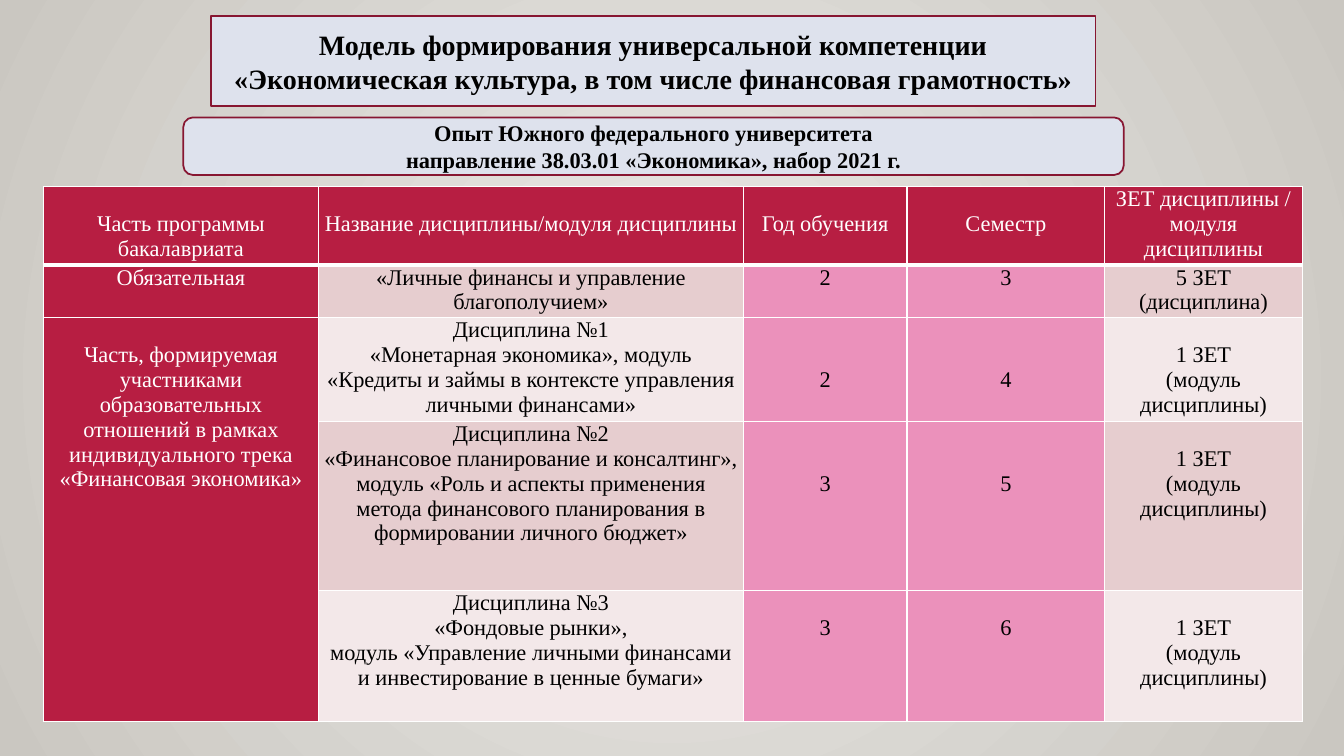
from dataclasses import dataclass
from lxml import etree
from pptx import Presentation
from pptx.dml.color import RGBColor
from pptx.enum.shapes import MSO_SHAPE
from pptx.enum.text import MSO_ANCHOR, MSO_AUTO_SIZE, PP_ALIGN
from pptx.oxml.ns import qn
from pptx.util import Cm, Pt

ROUND = MSO_SHAPE.ROUNDED_RECTANGLE
MIDDLE, TOP = MSO_ANCHOR.MIDDLE, MSO_ANCHOR.TOP
FIXED = MSO_AUTO_SIZE.NONE
CENTER = PP_ALIGN.CENTER

TITLE = ["Модель формирования универсальной компетенции",
         "«Экономическая культура, в том числе финансовая грамотность»"]
SUBTITLE = ["Опыт Южного федерального университета",
            "направление 38.03.01 «Экономика», набор 2021 г."]
UNIT = ["1 ЗЕТ", "(модуль дисциплины)"]

ROWS = [
    [(1, ["Часть программы бакалавриата"]),
     (1, ["Название дисциплины/модуля дисциплины"]),
     (1, ["Год обучения"]),
     (1, ["Семестр"]),
     (0, ["ЗЕТ дисциплины / модуля дисциплины"])],
    [(0, ["Обязательная"]),
     (0, ["«Личные финансы и управление благополучием»"]),
     (0, ["2"]),
     (0, ["3"]),
     (0, ["5 ЗЕТ", "(дисциплина)"])],
    [(1, ["Часть, формируемая участниками образовательных отношений "
          "в рамках индивидуального трека «Финансовая экономика»"]),
     (0, ["Дисциплина №1",
          "«Монетарная экономика», модуль «Кредиты и займы в контексте "
          "управления личными финансами»"]),
     (2, ["2"]),
     (2, ["4"]),
     (1, UNIT)],
    [None,
     (0, ["Дисциплина №2",
          "«Финансовое планирование и консалтинг»,",
          "модуль «Роль и аспекты применения метода финансового "
          "планирования в формировании личного бюджет»"]),
     (2, ["3"]),
     (2, ["5"]),
     (1, UNIT)],
    [None,
     (0, ["Дисциплина №3",
          "«Фондовые рынки»,",
          "модуль «Управление личными финансами и инвестирование "
          "в ценные бумаги»"]),
     (1, ["3"]),
     (1, ["6"]),
     (1, UNIT)],
]
WIDTHS = [6.94, 10.7, 4.13, 4.98, 4.98]
HEIGHTS = [1.98, 1.32, 2.62, 4.27, 3.3]
LINE = 0.63


@dataclass(frozen=True)
class Theme:
    font: str = "Times New Roman"
    dark: str = "000000"
    white: str = "FFFFFF"
    panel: str = "DEE2ED"
    edge: str = "871631"
    red: str = "B71E42"
    pink: str = "EB91BB"
    bands: tuple = ("F3E8E9", "E6CDCF")
    back: tuple = ("ECEAE7", "CAC7C1")
    head: int = 20
    body: int = 16


theme = Theme()


def color(code):
    return RGBColor.from_string(code)


def write(frame, lines, size=theme.body, ink=theme.dark, bold=False):
    frame.word_wrap = True
    for i, line in enumerate(lines):
        para = frame.paragraphs[0] if i == 0 else frame.add_paragraph()
        para.alignment = CENTER
        run = para.add_run()
        run.text = line
        run.font.name = theme.font
        run.font.size = Pt(size)
        run.font.bold = bold
        run.font.color.rgb = color(ink)


def panel(shape, lines, size):
    shape.fill.solid()
    shape.fill.fore_color.rgb = color(theme.panel)
    shape.line.color.rgb = color(theme.edge)
    shape.line.width = Pt(1.25)
    frame = shape.text_frame
    frame.auto_size = FIXED
    frame.vertical_anchor = MIDDLE
    write(frame, lines, size=size, bold=True)


def backdrop(slide):
    fill = slide.background.fill
    fill.gradient()
    for i, stop in enumerate(fill.gradient_stops):
        stop.position = i
        stop.color.rgb = color(theme.back[i])
    grad = next(slide.element.iter(qn("a:gradFill")))
    grad.remove(grad.find(qn("a:lin")))
    ring = etree.SubElement(grad, qn("a:path"), path="circle")
    etree.SubElement(ring, qn("a:fillToRect"), l="50000", t="50000",
                     r="50000", b="50000")


def border(cell, top, low):
    props = cell._tc.get_or_add_tcPr()
    for side, width in (("L", 1), ("R", 1), ("T", top), ("B", low)):
        line = etree.SubElement(props, qn("a:ln" + side), w=str(Pt(width)))
        paint = etree.SubElement(line, qn("a:solidFill"))
        etree.SubElement(paint, qn("a:srgbClr"), val=theme.white)


def shade(row, col):
    if row == 0 or col == 0:
        return theme.red
    return theme.pink if col in (2, 3) else theme.bands[row % 2]


def add_grid(slide):
    grid = slide.shapes.add_table(
        len(ROWS), len(WIDTHS), Cm(1.09), Cm(4.7),
        Cm(sum(WIDTHS)), Cm(sum(HEIGHTS))).table
    grid.horz_banding = False
    for col, width in zip(grid.columns, WIDTHS):
        col.width = Cm(width)
    for row, height in zip(grid.rows, HEIGHTS):
        row.height = Cm(height)
    grid.cell(2, 0).merge(grid.cell(4, 0))
    for r, items in enumerate(ROWS):
        for c, item in enumerate(items):
            cell = grid.cell(r, c)
            border(cell, 3 if r == 1 else 1, 3 if r == 0 else 1)
            cell.fill.solid()
            cell.fill.fore_color.rgb = color(shade(r, c))
            if item is None:
                continue
            skip, lines = item
            cell.vertical_anchor = TOP
            cell.margin_left = cell.margin_right = Cm(0.1)
            cell.margin_top, cell.margin_bottom = Cm(skip * LINE), 0
            ink = theme.white if r == 0 or c == 0 else theme.dark
            write(cell.text_frame, lines, ink=ink)


def main():
    deck = Presentation()
    deck.slide_width, deck.slide_height = Cm(33.87), Cm(19.05)
    slide = deck.slides.add_slide(deck.slide_layouts[5])
    backdrop(slide)

    title = slide.shapes.title
    title.left, title.top = Cm(5.31), Cm(0.4)
    title.width, title.height = Cm(22.3), Cm(2.28)
    shape = etree.SubElement(title.element.spPr, qn("a:prstGeom"),
                             prst="roundRect")
    etree.SubElement(shape, qn("a:avLst"))
    panel(title, TITLE, theme.head)

    note = slide.shapes.add_shape(ROUND, Cm(4.62), Cm(2.96),
                                  Cm(23.7), Cm(1.45))
    note.shadow.inherit = False
    panel(note, SUBTITLE, theme.body)

    add_grid(slide)
    deck.save("out.pptx")


if __name__ == "__main__":
    main()
